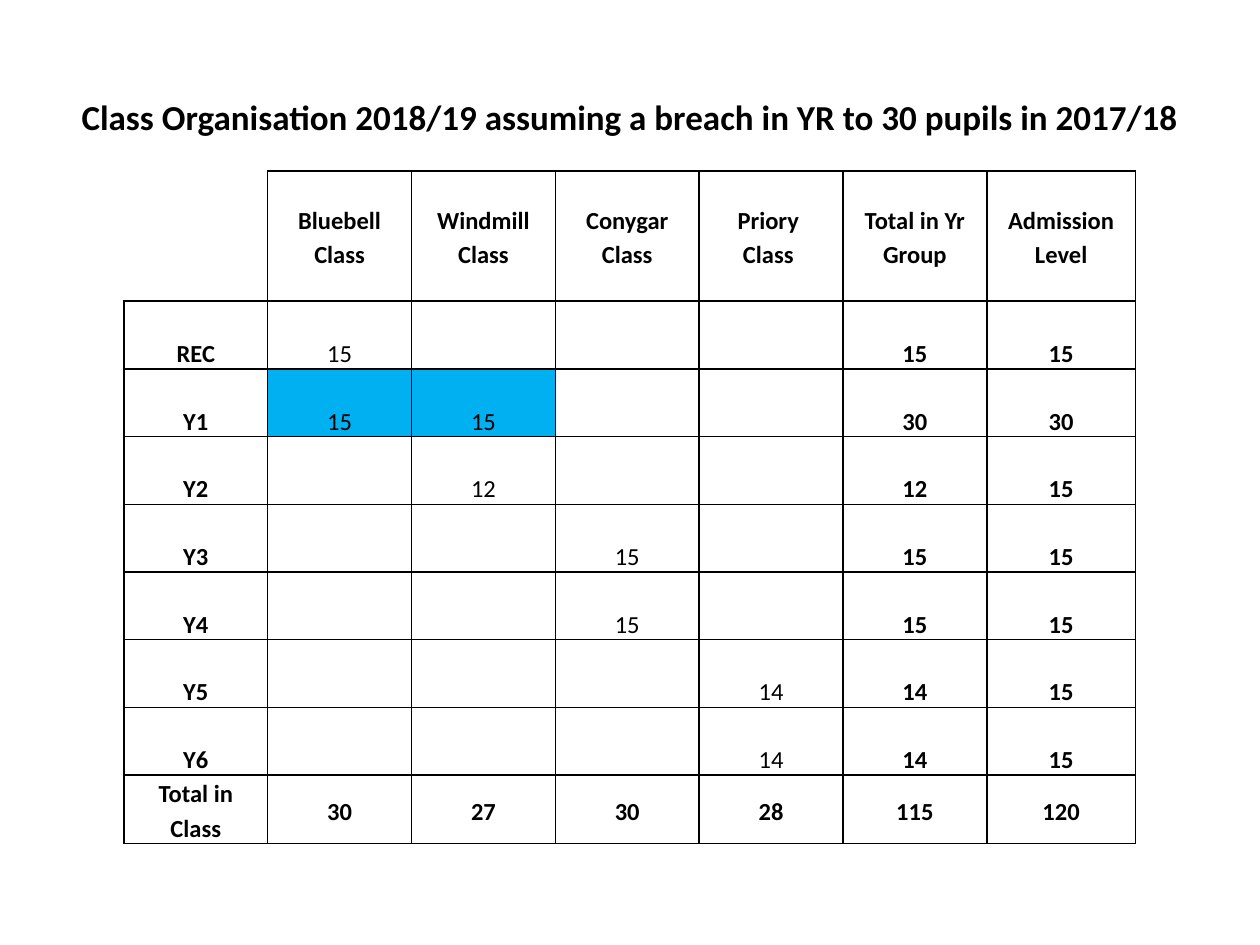
import pptx
import pptx.dml.color
import pptx.enum.text
import pptx.oxml
import pptx.oxml.ns
import pptx.util

Pt = pptx.util.Pt
ANCHOR = pptx.enum.text.MSO_ANCHOR
COLOURS = {"ink": "000000", "highlight": "00B0F0"}
FONT = "Calibri"
TITLE = "Class Organisation 2018/19 assuming a breach in YR to 30 pupils in 2017/18"
HEADERS = ["", "Bluebell Class", "Windmill Class", "Conygar Class", "Priory \nClass ",
           "Total in Yr Group", "Admission Level"]
YEAR_GROUPS = [
    ["REC", "15", "", "", "", "15", "15"],
    ["Y1", "15", "15", "", "", "30", "30"],
    ["Y2", "", "12", "", "", "12", "15"],
    ["Y3", "", "", "15", "", "15", "15"],
    ["Y4", "", "", "15", "", "15", "15"],
    ["Y5", "", "", "", "14", "14", "15"],
    ["Y6", "", "", "", "14", "14", "15"],
]
TOTALS = ["Total in Class", "30", "27", "30", "28", "115", "120"]
ROWS = [HEADERS, [""] * len(HEADERS), *YEAR_GROUPS, TOTALS]
HEADER_ROWS = 2
CLASS_COLUMNS = range(1, 5)
HIGHLIGHTED = {(3, 1), (3, 2)}
COLUMN_WIDTHS = [82.2] * 6 + [85]
ROW_HEIGHTS = [35.3] * HEADER_ROWS + [38.7] * len(YEAR_GROUPS) + [36.7]


def colour(name):
    return pptx.dml.color.RGBColor.from_string(COLOURS[name])


def format_text(frame, size, bold, spacing=None):
    for para in frame.paragraphs:
        para.alignment = pptx.enum.text.PP_ALIGN.CENTER
        para.line_spacing = spacing
        for span in para.runs:
            span.font.name = FONT
            span.font.size = Pt(size)
            span.font.bold = bold
            span.font.color.rgb = colour("ink")


def set_borders(cell, sides):
    properties = cell._tc.get_or_add_tcPr()
    namespace = pptx.oxml.ns.nsdecls("a")
    for position, side in enumerate("LRTB"):
        if side in sides:
            paint = f'<a:solidFill><a:srgbClr val="{COLOURS["ink"]}"/></a:solidFill>'
        else:
            paint = "<a:noFill/>"
        line = pptx.oxml.parse_xml(f'<a:ln{side} {namespace} w="{Pt(1)}">{paint}</a:ln{side}>')
        properties.insert(position, line)


def add_title(page, left, top, width, height):
    box = page.shapes.title
    box.left, box.top, box.width, box.height = Pt(left), Pt(top), Pt(width), Pt(height)
    box.text_frame.text = TITLE
    box.text_frame.word_wrap = True
    box.text_frame.vertical_anchor = ANCHOR.MIDDLE
    format_text(box.text_frame, 20, True)


def fill_cell(cell, row, column, text):
    is_year_group = HEADER_ROWS <= row < len(ROWS) - 1
    cell.margin_left = cell.margin_right = Pt(5)
    cell.margin_top = cell.margin_bottom = 0
    cell.vertical_anchor = ANCHOR.BOTTOM if is_year_group else ANCHOR.MIDDLE
    if text:
        cell.text_frame.text = text
        format_text(cell.text_frame, 14, not (is_year_group and column in CLASS_COLUMNS), 1.15)
    if (row, column) in HIGHLIGHTED:
        cell.fill.solid()
        cell.fill.fore_color.rgb = colour("highlight")
    else:
        cell.fill.background()
    if column == 0 and row < HEADER_ROWS:
        set_borders(cell, "R" if row == 0 else "RB")
    else:
        set_borders(cell, "LRTB")


def add_class_table(page, left, top, width, height):
    table = page.shapes.add_table(len(ROWS), len(HEADERS), Pt(left), Pt(top),
                                  Pt(width), Pt(height)).table
    table.first_row = table.horz_banding = False
    for column, size in zip(table.columns, COLUMN_WIDTHS):
        column.width = Pt(size)
    for row, size in zip(table.rows, ROW_HEIGHTS):
        row.height = Pt(size)
    for row, texts in enumerate(ROWS):
        for column, text in enumerate(texts):
            fill_cell(table.cell(row, column), row, column, text)
    for column in range(1, len(HEADERS)):
        table.cell(0, column).merge(table.cell(HEADER_ROWS - 1, column))


def main():
    deck = pptx.Presentation()
    deck.slide_width, deck.slide_height = Pt(720), Pt(540)
    page = deck.slides.add_slide(deck.slide_layouts[5])
    add_title(page, 36, 21.6, 648, 90)
    add_class_table(page, 70.8, 97.6, sum(COLUMN_WIDTHS), sum(ROW_HEIGHTS))
    deck.save("out.pptx")


if __name__ == "__main__":
    main()
